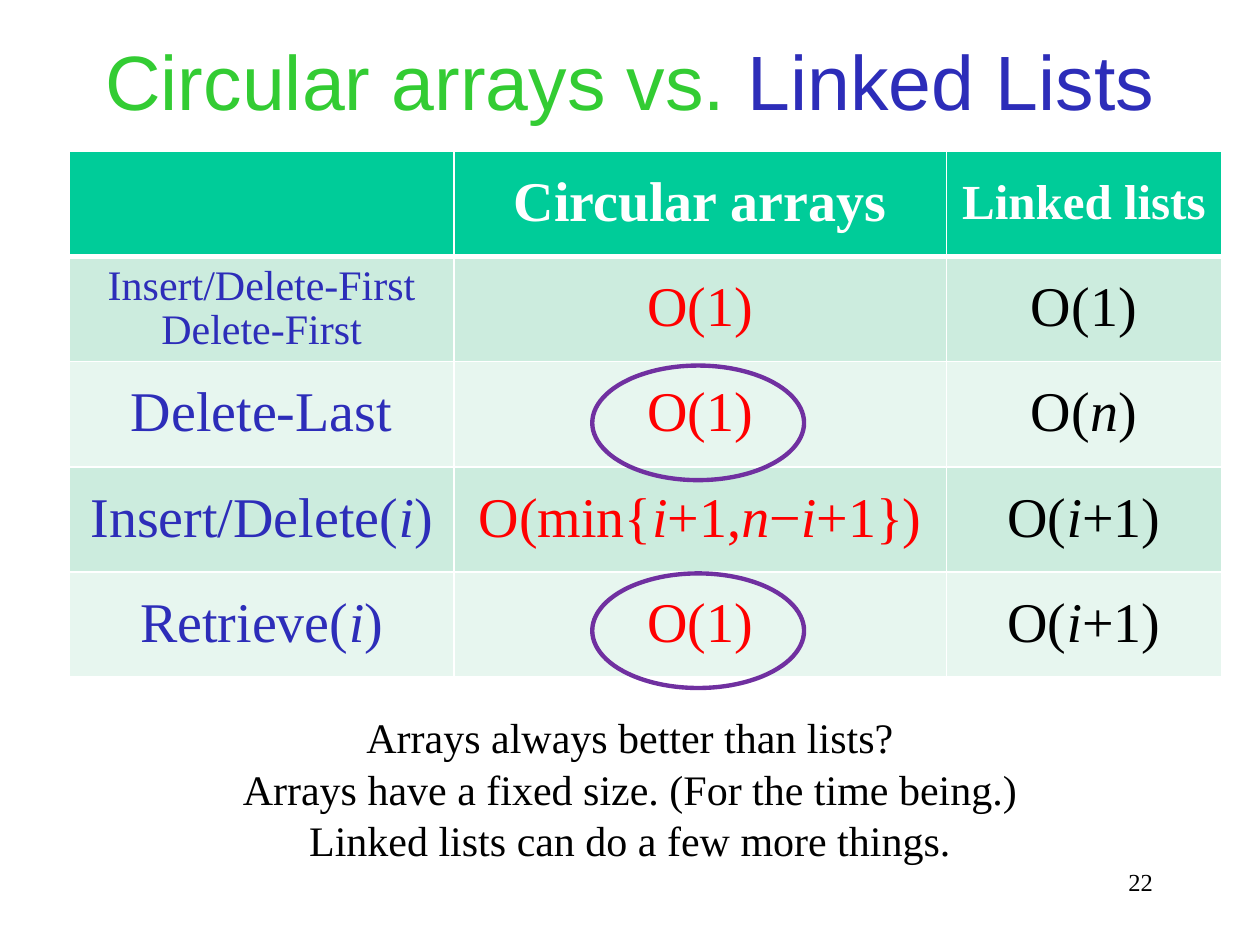
from lxml.etree import SubElement
from pptx import Presentation
from pptx.dml.color import RGBColor
from pptx.enum.shapes import MSO_SHAPE
from pptx.enum.text import MSO_ANCHOR, PP_ALIGN
from pptx.oxml.ns import qn
from pptx.util import Cm, Pt

# Text between asterisks is italic.
TITLE = [("Circular arrays vs. ", "arrays"), ("Linked Lists", "lists")]
HEADER = [("", "heading"), ("Circular arrays", "heading"), ("Linked lists", "subheading")]
OPERATIONS = [
    ("Insert/Delete-First Delete-First", "O(1)", "O(1)"),
    ("Delete-Last", "O(1)", "O(*n*)"),
    ("Insert/Delete(*i*)", "O(min{*i*+1,*n*−*i*+1})", "O(*i*+1)"),
    ("Retrieve(*i*)", "O(1)", "O(*i*+1)"),
]
LONG_LABEL = OPERATIONS[0][0]
REMARKS = [
    "Arrays always better than lists?",
    "Arrays have a fixed size. (For the time being.)",
    "Linked lists can do a few more things.",
]
PAGE_NUMBER = "22"

THEME = {
    "colors": {
        "arrays": "33CC33", "lists": "2D2DB9", "header": "00CC99", "bands": ("CCECDE", "E7F6EF"),
        "columns": ("2D2DB9", "FF0000", "000000"), "white": "FFFFFF", "text": "000000",
        "ring": "7030A0",
    },
    "sizes": {"title": 44, "heading": 32, "subheading": 28, "cell": 32, "remark": 24, "page": 14},
    "fonts": {"title": "Arial", "text": "Times New Roman"},
}
COLORS, SIZES, FONTS = THEME["colors"], THEME["sizes"], THEME["fonts"]

SLIDE_W, SLIDE_H = 25.4, 19.05
TABLE_LEFT, TABLE_TOP, ROW_H = 1.4, 3.05, 2.12
COLUMN_WIDTHS = (7.75, 9.93, 5.54)
RING_W, RING_H, RING_LEFT = 4.27, 2.31, 11.94
RING_TOPS = (7.37, 11.56)
REMARK_TOP, REMARK_STEP, LINE_H = 14.22, 1.04, 1.27


def write(paragraph, text, color, size, align=PP_ALIGN.CENTER, font="text", bold=False):
    """Append runs to the paragraph, italic between asterisks."""
    paragraph.alignment = align
    for index, part in enumerate(text.split("*")):
        if not part:
            continue
        run = paragraph.add_run()
        run.text = part
        run_format = {"name": FONTS[font], "size": Pt(SIZES[size]),
                      "bold": bold, "italic": index % 2 == 1}
        for attribute, value in run_format.items():
            setattr(run.font, attribute, value)
        run.font.color.rgb = RGBColor.from_string(color)


def set_borders(cell, bottom_width):
    properties = cell._tc.get_or_add_tcPr()
    widths = {"a:lnL": 1, "a:lnR": 1, "a:lnT": 1, "a:lnB": bottom_width}
    for position, (side, width) in enumerate(widths.items()):
        line = SubElement(properties, qn(side), w=str(Pt(width)))
        fill = SubElement(line, qn("a:solidFill"))
        SubElement(fill, qn("a:srgbClr"), val=COLORS["white"])
        properties.insert(position, line)


def fill_cell(cell, text, fill, color, size, bold=False, bottom_width=1):
    cell.fill.solid()
    cell.fill.fore_color.rgb = RGBColor.from_string(fill)
    cell.vertical_anchor = MSO_ANCHOR.MIDDLE
    set_borders(cell, bottom_width)
    paragraph = cell.text_frame.paragraphs[0]
    paragraph.line_spacing = 0.95
    write(paragraph, text, color, size, bold=bold)


def add_title(slide):
    title = slide.shapes.title
    place = {"left": Cm(0), "top": Cm(0.03), "width": Cm(SLIDE_W), "height": Cm(3.17)}
    for attribute, value in place.items():
        setattr(title, attribute, value)
    title.text_frame.vertical_anchor = MSO_ANCHOR.MIDDLE
    for text, color in TITLE:
        write(title.text_frame.paragraphs[0], text, COLORS[color], "title", font="title")


def add_comparison(slide):
    row_count = len(OPERATIONS) + 1
    table = slide.shapes.add_table(
        row_count, len(COLUMN_WIDTHS), Cm(TABLE_LEFT), Cm(TABLE_TOP),
        Cm(sum(COLUMN_WIDTHS)), Cm(ROW_H * row_count)).table
    for column, width in zip(table.columns, COLUMN_WIDTHS):
        column.width = Cm(width)
    for row in table.rows:
        row.height = Cm(ROW_H)
    for column, (text, size) in enumerate(HEADER):
        fill_cell(table.cell(0, column), text, COLORS["header"], COLORS["white"], size,
                  bold=True, bottom_width=3)
    for row, operation in enumerate(OPERATIONS):
        for column, text in enumerate(operation):
            size = "remark" if text == LONG_LABEL else "cell"
            fill_cell(table.cell(row + 1, column), text, COLORS["bands"][row % 2],
                      COLORS["columns"][column], size)


def add_line(slide, text, left, top, width, size, align=PP_ALIGN.CENTER):
    """Add a one-line text box."""
    frame = slide.shapes.add_textbox(Cm(left), Cm(top), Cm(width), Cm(LINE_H)).text_frame
    frame.word_wrap = True
    write(frame.paragraphs[0], text, COLORS["text"], size, align)


def add_ring(slide, top):
    ring = slide.shapes.add_shape(
        MSO_SHAPE.OVAL, Cm(RING_LEFT), Cm(top), Cm(RING_W), Cm(RING_H))
    ring.shadow.inherit = False
    ring.fill.background()
    ring.line.color.rgb = RGBColor.from_string(COLORS["ring"])
    ring.line.width = Pt(2.5)


def main():
    presentation = Presentation()
    presentation.slide_width, presentation.slide_height = Cm(SLIDE_W), Cm(SLIDE_H)
    slide = presentation.slides.add_slide(presentation.slide_layouts.get_by_name("Title Only"))
    add_title(slide)
    add_comparison(slide)
    for index, remark in enumerate(REMARKS):
        add_line(slide, remark, 0, REMARK_TOP + index * REMARK_STEP, SLIDE_W, "remark")
    for top in RING_TOPS:
        add_ring(slide, top)
    add_line(slide, PAGE_NUMBER, 18.21, 17.35, 5.28, "page", PP_ALIGN.RIGHT)
    presentation.save("out.pptx")


if __name__ == "__main__":
    main()
